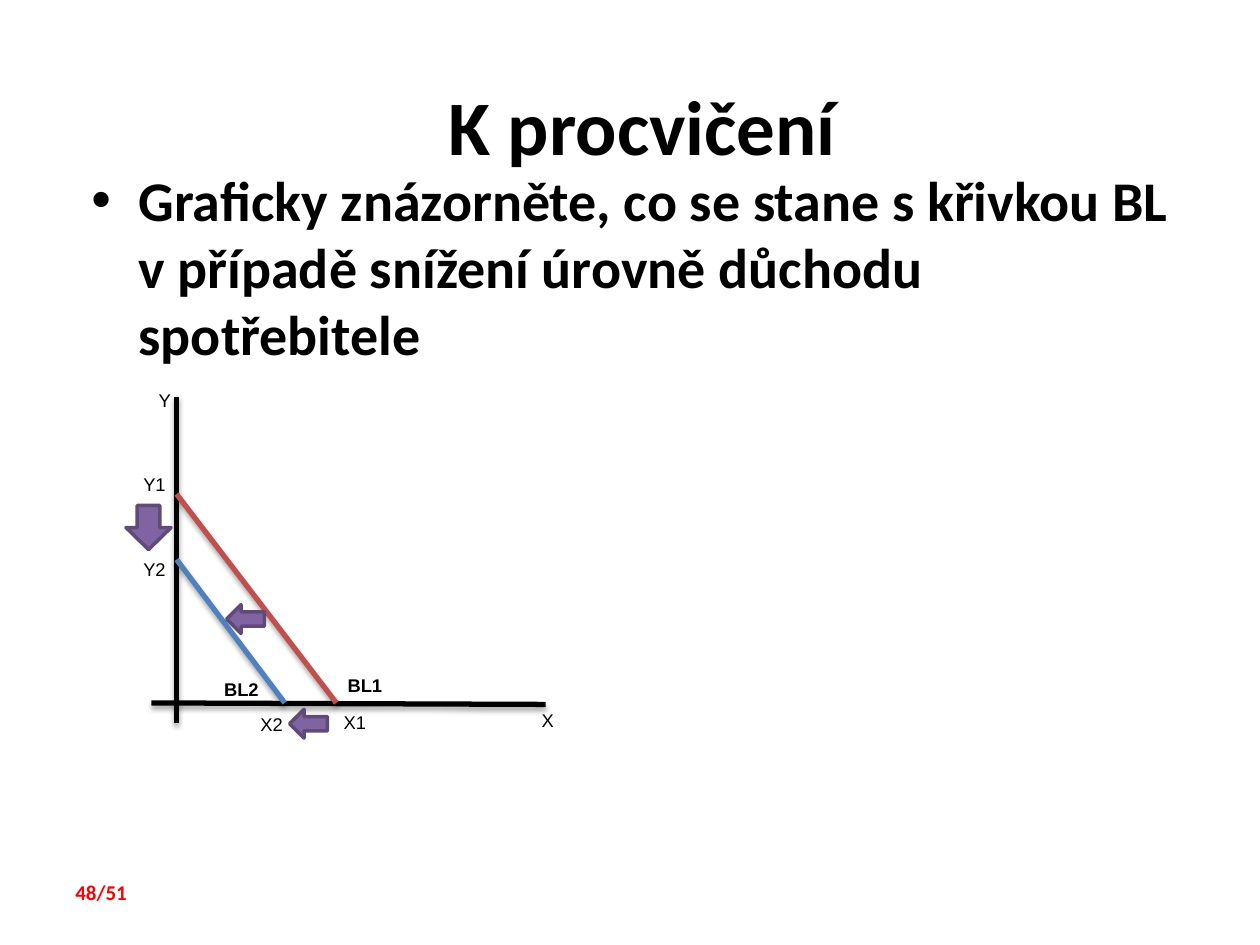
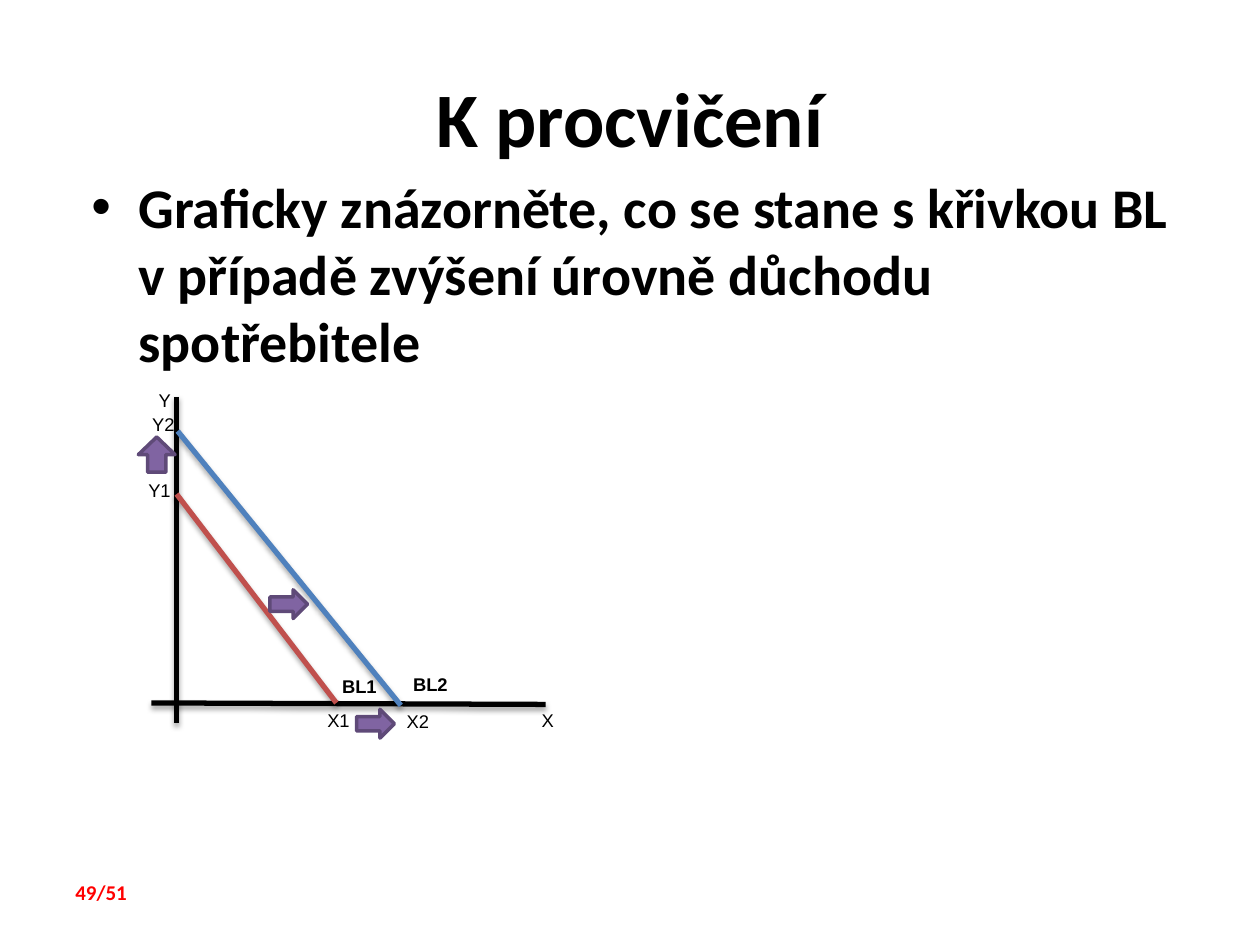
from lxml import etree
from pptx import Presentation
from pptx.dml.color import RGBColor
from pptx.enum.shapes import MSO_CONNECTOR, MSO_SHAPE
from pptx.enum.text import MSO_ANCHOR, MSO_AUTO_SIZE as AUTO_SIZE, PP_ALIGN
from pptx.oxml.ns import qn
from pptx.util import Cm, Pt

BLACK, RED, PURPLE, DARK_PURPLE = "000000", "FF0000", "8064A2", "5F4A78"
FIRST_LINE, SECOND_LINE = "C0504D", "4F81BD"
SMALL_ARROW = (0.76, 0.58)
LABEL_WIDTHS = {1: 0.76, 2: 0.97, 3: 1.22}
LABEL_HEIGHT = 0.71

EXERCISES = [
    {
        "number": "48/51",
        "task": "Graficky znázorněte, co se stane s křivkou BL v případě snížení úrovně důchodu spotřebitele",
        "title_box": (1.52, 1.55, 22.86, 1.93),
        "body_box": (1.27, 3.2, 22.86, 13.82),
        "second_line": (3.56, 11.28, 5.74, 14.17),
        "labels": {
            "BL1": (6.76, 13.46), "BL2": (4.27, 13.54),
            "Y1": (2.64, 9.42), "Y2": (2.64, 11.13),
            "X1": (6.68, 14.22), "X2": (5, 14.25),
        },
        "arrows": [
            (MSO_SHAPE.LEFT_ARROW, 4.57, 12.19, *SMALL_ARROW),
            (MSO_SHAPE.LEFT_ARROW, 5.84, 14.3, *SMALL_ARROW),
            (MSO_SHAPE.DOWN_ARROW, 2.54, 10.19, 0.91, 0.89),
        ],
    },
    {
        "number": "49/51",
        "task": "Graficky znázorněte, co se stane s křivkou BL v případě zvýšení úrovně důchodu spotřebitele",
        "title_box": (1.27, 0.76, 22.86, 3.18),
        "body_box": (1.27, 3.35, 22.86, 13.67),
        "second_line": (3.58, 8.69, 8.08, 14.22),
        "labels": {
            "BL1": (6.65, 13.49), "BL2": (8.08, 13.44),
            "Y1": (2.74, 9.53), "Y2": (2.82, 8.2),
            "X1": (6.35, 14.17), "X2": (7.95, 14.2),
        },
        "arrows": [
            (MSO_SHAPE.RIGHT_ARROW, 5.44, 11.89, *SMALL_ARROW),
            (MSO_SHAPE.RIGHT_ARROW, 7.19, 14.3, *SMALL_ARROW),
            (MSO_SHAPE.UP_ARROW, 2.79, 8.81, 0.74, 0.71),
        ],
    },
]


def color(hex_code):
    """Turn a hex string into a colour."""
    return RGBColor.from_string(hex_code)


def add_element(parent, tag, **attributes):
    """Append a drawing element with the given attributes."""
    element = etree.SubElement(parent, qn(tag))
    for name, value in attributes.items():
        element.set(name, str(value))
    return element


def write_text(shape, text, size=10.5, font="Arial", hex_code=BLACK, bold=False,
               align=PP_ALIGN.LEFT, wrap=True, auto_size=AUTO_SIZE.NONE,
               anchor=MSO_ANCHOR.TOP, bullet=False):
    """Fill a shape with one formatted paragraph."""
    frame = shape.text_frame
    frame.word_wrap = wrap
    frame.auto_size = auto_size
    frame.vertical_anchor = anchor
    paragraph = frame.paragraphs[0]
    paragraph.text = text
    paragraph.alignment = align
    paragraph.space_before = Pt(0)
    if bullet:
        add_bullet(paragraph)
    paragraph.font.size = Pt(size)
    paragraph.font.name = font
    paragraph.font.bold = bold
    paragraph.font.color.rgb = color(hex_code)


def add_bullet(paragraph):
    """Give a paragraph a black round bullet and a hanging indent."""
    properties = paragraph._p.get_or_add_pPr()
    properties.set("marL", str(Cm(1.27)))
    properties.set("indent", str(Cm(-0.95)))
    bullet_color = add_element(properties, "a:buClr")
    add_element(bullet_color, "a:srgbClr", val=BLACK)
    add_element(properties, "a:buFont", typeface="Arial")
    add_element(properties, "a:buChar", char="•")


def fill_placeholder(placeholder, box, text, **text_format):
    """Move a placeholder and write bold Calibri text in it."""
    placeholder.left, placeholder.top, placeholder.width, placeholder.height = map(Cm, box)
    write_text(placeholder, text, font="Calibri", bold=True, **text_format)


def add_text(slide, text, box, **text_format):
    """Add a text box that grows with its text."""
    shape = slide.shapes.add_textbox(*map(Cm, box))
    write_text(shape, text, auto_size=AUTO_SIZE.SHAPE_TO_FIT_TEXT, **text_format)


def add_label(slide, text, position):
    """Label a point, an axis or a budget line of the graph."""
    box = (*position, LABEL_WIDTHS[len(text)], LABEL_HEIGHT)
    add_text(slide, text, box, bold=text.startswith("BL"), wrap=False)


def add_line(slide, ends, hex_code):
    """Draw a thick straight line with a soft shadow below it."""
    line = slide.shapes.add_connector(MSO_CONNECTOR.STRAIGHT, *map(Cm, ends))
    line.line.color.rgb = color(hex_code)
    line.line.width = Pt(3)
    effects = add_element(line._element.spPr, "a:effectLst")
    shadow = add_element(effects, "a:outerShdw", blurRad=Pt(3.1), dist=Pt(1.8),
                         dir=5400000, rotWithShape=0)
    shadow_color = add_element(shadow, "a:srgbClr", val=BLACK)
    add_element(shadow_color, "a:alpha", val=35000)


def add_arrow(slide, kind, *box):
    """Draw a purple block arrow that shows a shift."""
    arrow = slide.shapes.add_shape(kind, *map(Cm, box))
    arrow.shadow.inherit = False
    arrow.fill.solid()
    arrow.fill.fore_color.rgb = color(PURPLE)
    arrow.line.color.rgb = color(DARK_PURPLE)
    arrow.line.width = Pt(2)


def add_axes(slide):
    """Draw the two axes with their names."""
    add_line(slide, (3.56, 8, 3.56, 14.58), BLACK)
    add_line(slide, (3.05, 14.17, 11, 14.2), BLACK)
    add_label(slide, "Y", (2.95, 7.72))
    add_label(slide, "X", (10.67, 14.17))


def add_exercise(presentation, exercise):
    """Build one exercise slide with its budget line graph."""
    slide = presentation.slides.add_slide(presentation.slide_layouts[1])
    title, body = slide.placeholders
    fill_placeholder(title, exercise["title_box"], "K procvičení", size=44,
                     align=PP_ALIGN.CENTER, anchor=MSO_ANCHOR.MIDDLE)
    fill_placeholder(body, exercise["body_box"], exercise["task"], size=32, bullet=True)
    add_axes(slide)
    add_line(slide, (3.56, 9.96, 6.78, 14.17), FIRST_LINE)
    add_line(slide, exercise["second_line"], SECOND_LINE)
    for arrow in exercise["arrows"]:
        add_arrow(slide, *arrow)
    for text, position in exercise["labels"].items():
        add_label(slide, text, position)
    add_text(slide, exercise["number"], (1.27, 17.6, 2.34, 0.76), size=12,
             font="Calibri", hex_code=RED, bold=True)


def main():
    """Build and save the presentation."""
    presentation = Presentation()
    presentation.slide_width, presentation.slide_height = Cm(25.4), Cm(19.05)
    for exercise in EXERCISES:
        add_exercise(presentation, exercise)
    presentation.save("out.pptx")


if __name__ == "__main__":
    main()
